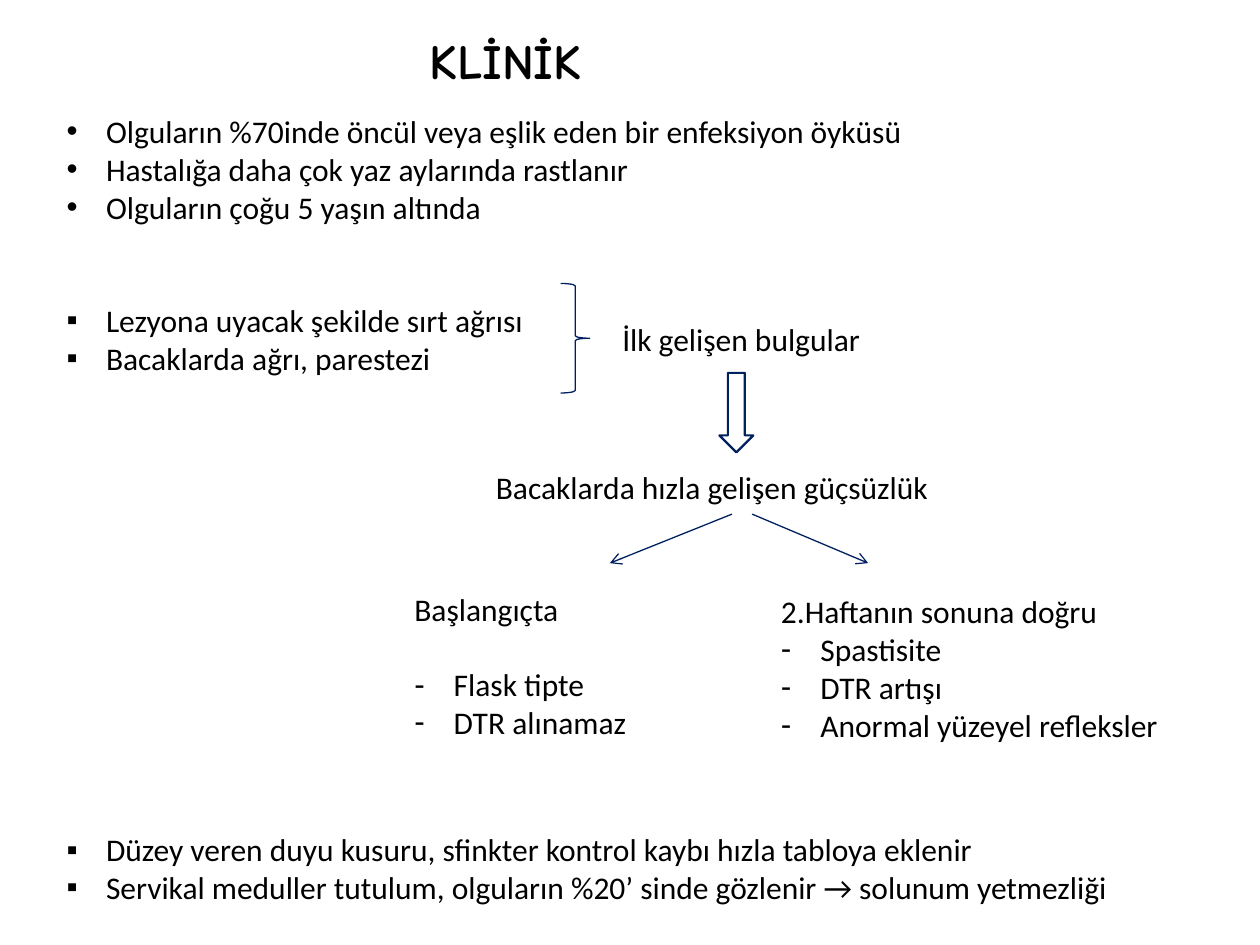
from lxml import etree
from pptx import Presentation
from pptx.dml.color import RGBColor
from pptx.enum.shapes import MSO_CONNECTOR, MSO_SHAPE
from pptx.enum.text import MSO_ANCHOR, MSO_AUTO_SIZE, PP_ALIGN
from pptx.oxml.ns import qn
from pptx.util import Pt

STRAIGHT = MSO_CONNECTOR.STRAIGHT
BRACE, DOWN_ARROW = MSO_SHAPE.RIGHT_BRACE, MSO_SHAPE.DOWN_ARROW
TOP, LEFT, NO_AUTOFIT = MSO_ANCHOR.TOP, PP_ALIGN.LEFT, MSO_AUTO_SIZE.NONE

COLORS = {"text": "000000", "line": "002060"}
TITLE_FONT, BODY_FONT = "Comic Neue", "Calibri"
TITLE_SIZE, BODY_SIZE = 28, 18
LINE_HEIGHT = 21.6
INDENT = 22.5

# Content: (bullet, text, empty lines above)
TITLE = "KLİNİK"
TITLE_BOX = (238.3, 13.7, 198.7, 41)
TEXTS = [
    ((31, 60.5, 674.6, 465), [
        ("•", "Olguların %70inde öncül veya eşlik eden bir enfeksiyon öyküsü", 0),
        ("•", "Hastalığa daha çok yaz aylarında rastlanır", 0),
        ("•", "Olguların çoğu 5 yaşın altında", 0),
        ("▪", "Lezyona uyacak şekilde sırt ağrısı", 2),
        ("▪", "Bacaklarda ağrı, parestezi", 0),
        ("▪", "Düzey veren duyu kusuru, sfinkter kontrol kaybı hızla tabloya eklenir", 12),
        ("▪", "Servikal meduller tutulum, olguların %20’ sinde gözlenir → solunum yetmezliği", 0),
    ]),
    ((348.5, 179.3, 223.9, 28.8), [(None, "İlk gelişen bulgular", 0)]),
    ((272.2, 264.2, 292.3, 28.8), [(None, " Bacaklarda hızla gelişen güçsüzlük", 0)]),
    ((229.7, 333.4, 215.3, 94.3), [
        (None, "Başlangıçta", 0),
        ("-", "Flask tipte", 1),
        ("-", "DTR alınamaz", 0),
    ]),
    ((439.2, 334.8, 249.1, 94.3), [
        (None, "2.Haftanın sonuna doğru", 0),
        ("-", "Spastisite", 0),
        ("-", "DTR artışı", 0),
        ("-", "Anormal yüzeyel refleksler", 0),
    ]),
]
OUTLINES = [
    (BRACE, (320.4, 162, 16.6, 62.6), 0.75),
    (DOWN_ARROW, (411.1, 213.1, 19.4, 45.4), 1.25),
]
BRANCH_TOP, BRANCH_BOTTOM = 293.8, 321.8
BRANCHES = [(418.3, 348.5), (429.8, 496.1)]


def points(values):
    return [Pt(value) for value in values]


def style_font(font, name, size):
    font.name = name
    font.size = Pt(size)
    font.color.rgb = RGBColor.from_string(COLORS["text"])


def style_line(line, width):
    line.color.rgb = RGBColor.from_string(COLORS["line"])
    line.width = Pt(width)


def add_bullet(paragraph, character):
    properties = paragraph._p.get_or_add_pPr()
    properties.set("marL", str(Pt(INDENT)))
    properties.set("indent", str(-Pt(INDENT)))
    etree.SubElement(properties, qn("a:buFont")).set("typeface", "Arial")
    etree.SubElement(properties, qn("a:buChar")).set("char", character)


def add_text(slide, box, lines):
    frame = slide.shapes.add_textbox(*points(box)).text_frame
    frame.word_wrap = True
    frame.text = "\n".join(text for _, text, _ in lines)
    for paragraph, (bullet, _, gap) in zip(frame.paragraphs, lines):
        if gap:
            paragraph.space_before = Pt(gap * LINE_HEIGHT)
        if bullet:
            add_bullet(paragraph, bullet)
        for run in paragraph.runs:
            style_font(run.font, BODY_FONT, BODY_SIZE)


def add_branch(slide, start_x, end_x):
    branch = slide.shapes.add_connector(
        STRAIGHT, *points((start_x, BRANCH_TOP, end_x, BRANCH_BOTTOM)))
    style_line(branch.line, 0.75)
    etree.SubElement(branch.line._get_or_add_ln(), qn("a:tailEnd")).set("type", "arrow")
    etree.SubElement(branch._element.spPr, qn("a:effectLst"))


def main():
    prs = Presentation()
    prs.slide_width, prs.slide_height = points((720, 540))
    slide = prs.slides.add_slide(prs.slide_layouts[5])

    # Title
    title = slide.shapes.title
    title.left, title.top, title.width, title.height = points(TITLE_BOX)
    frame = title.text_frame
    frame.text = TITLE
    frame.vertical_anchor = TOP
    frame.auto_size = NO_AUTOFIT
    heading = frame.paragraphs[0]
    heading.alignment = LEFT
    style_font(heading.runs[0].font, TITLE_FONT, TITLE_SIZE)
    heading.runs[0].font.bold = True

    # Findings
    for box, lines in TEXTS:
        add_text(slide, box, lines)

    # Brace and block arrow
    for kind, box, width in OUTLINES:
        outline = slide.shapes.add_shape(kind, *points(box))
        outline.shadow.inherit = False
        outline.fill.background()
        style_line(outline.line, width)

    # Arrows to the two stages
    for start_x, end_x in BRANCHES:
        add_branch(slide, start_x, end_x)

    prs.save("out.pptx")


if __name__ == "__main__":
    main()
